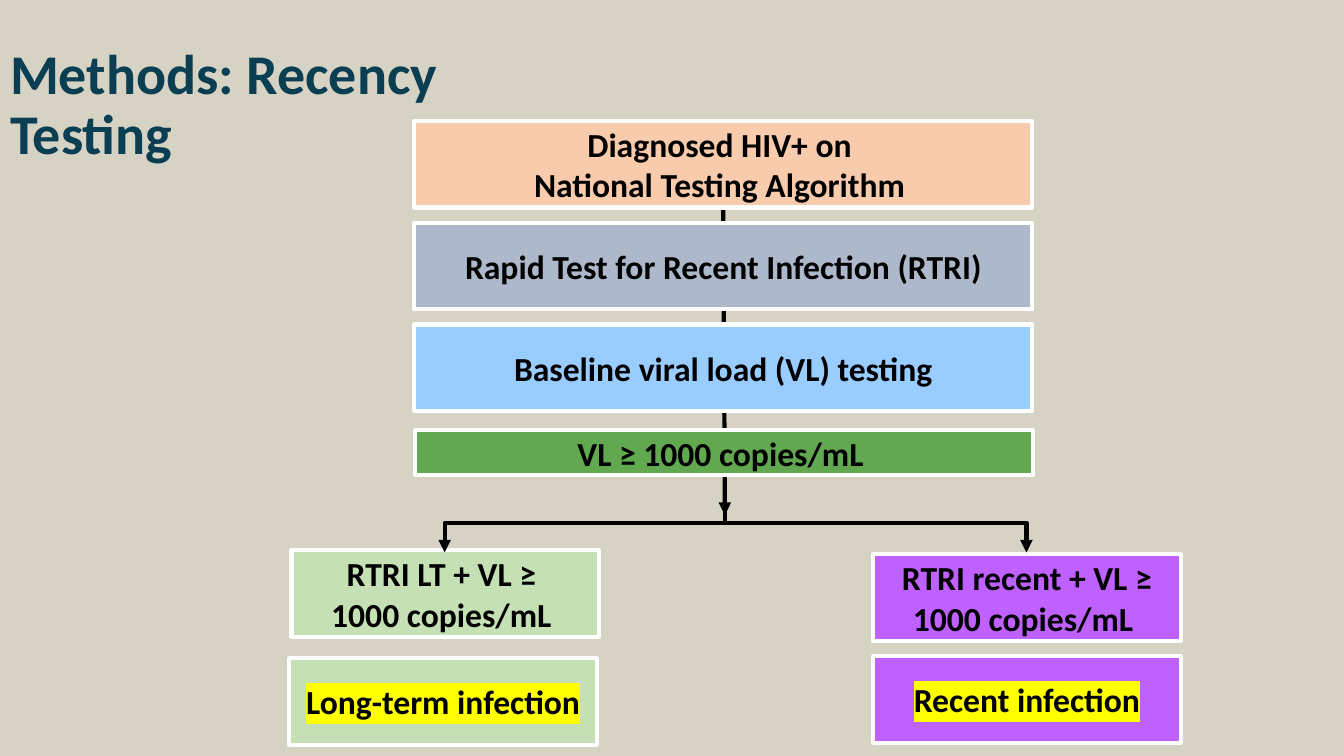
from pptx import Presentation, util as u
from pptx.dml.color import RGBColor
from pptx.enum import shapes, text
from pptx.oxml import parse_xml
from pptx.oxml.ns import nsdecls, qn

HUES = {
    "back": "D6D2C4", "title": "0A3E53", "ink": "000000", "edge": "FFFFFF",
    "peach": "F8CBAD", "slate": "ADB9CA", "sky": "99CCFF", "green": "61A851",
    "mint": "C5E0B4", "violet": "BF61FF", "mark": "FFFF00",
}
FONT = "Calibri"
WIDE, NARROW, TALL = 6.13, 3.05, 0.86
STEM = 7.19  # centre of the flow
FORK, TIPS = 4.89, 5.48  # top and bottom of the branches


def hue(name):
    return RGBColor.from_string(HUES[name])


def add_run(para, words, size, color, mark=False):
    run = para.add_run()
    run.text = words
    font = run.font
    font.size, font.bold = u.Pt(size), True
    font.color.rgb = hue(color)
    font.name = FONT
    if mark:
        light = parse_xml(f'<a:highlight {nsdecls("a")}>'
                          f'<a:srgbClr val="{HUES["mark"]}"/></a:highlight>')
        font._element.find(qn("a:solidFill")).addnext(light)


def add_title(slide, words):
    title = slide.shapes.title
    title.left, title.top = u.Inches(0), u.Inches(0.63)
    title.width, title.height = u.Inches(4.52), u.Inches(0.85)
    frame = title.text_frame
    frame.auto_size = text.MSO_AUTO_SIZE.NONE
    frame.vertical_anchor = text.MSO_ANCHOR.MIDDLE
    para = frame.paragraphs[0]
    para.alignment = text.PP_ALIGN.LEFT
    para.line_spacing = 0.9
    add_run(para, words, 40, "title")


def add_box(slide, left, top, width, height, fill, lines, wrap=True, mark=False):
    box = slide.shapes.add_shape(
        shapes.MSO_SHAPE.RECTANGLE, u.Inches(left), u.Inches(top),
        u.Inches(width), u.Inches(height))
    box.shadow.inherit = False
    box.fill.solid()
    box.fill.fore_color.rgb = hue(fill)
    box.line.color.rgb = hue("edge")
    box.line.width = u.Pt(3)
    frame = box.text_frame
    frame.word_wrap = wrap
    frame.vertical_anchor = text.MSO_ANCHOR.MIDDLE
    for i, words in enumerate(lines):
        para = frame.add_paragraph() if i else frame.paragraphs[0]
        para.alignment = text.PP_ALIGN.CENTER
        add_run(para, words, 24, "ink", mark)


def add_arrow(slide, kind, x1, y1, x2, y2):
    arrow = slide.shapes.add_connector(
        kind, u.Inches(x1), u.Inches(y1), u.Inches(x2), u.Inches(y2))
    arrow.line.color.rgb = hue("ink")
    arrow.line.width = u.Pt(3)
    arrow.line._get_or_add_ln().append(
        parse_xml(f'<a:tailEnd {nsdecls("a")} type="triangle"/>'))
    arrow._element.spPr.append(parse_xml(f'<a:effectLst {nsdecls("a")}/>'))
    return arrow


def add_branch(slide, tip):
    """Elbow that drops, runs sideways and drops again: a turned connector."""
    drop, span = TIPS - FORK, abs(tip - STEM)
    left = (STEM + tip - drop) / 2
    top = (FORK + TIPS - span) / 2
    arrow = add_arrow(slide, shapes.MSO_CONNECTOR.ELBOW,
                      left, top, left + drop, top + span)
    frame = arrow._element.spPr.find(qn("a:xfrm"))
    frame.set("rot", str((90 if tip < STEM else 270) * 60000))
    if tip > STEM:
        frame.set("flipH", "1")


def main():
    deck = Presentation()
    deck.slide_width, deck.slide_height = u.Inches(13.33), u.Inches(7.5)
    slide = deck.slides.add_slide(deck.slide_layouts[5])
    slide.background.fill.solid()
    slide.background.fill.fore_color.rgb = hue("back")
    add_title(slide, "Methods: Recency Testing")

    # Stem behind the steps
    add_arrow(slide, shapes.MSO_CONNECTOR.STRAIGHT, 7.17, 1.42, STEM, 5.11)

    # Testing steps
    steps = [
        ("peach", ["Diagnosed HIV+ on ", "National Testing Algorithm "]),
        ("slate", ["Rapid Test for Recent Infection (RTRI)"]),
        ("sky", ["Baseline viral load (VL) testing"]),
    ]
    for i, (fill, lines) in enumerate(steps):
        add_box(slide, 4.11, 1.2 + 1.01 * i, WIDE, TALL, fill, lines, wrap=False)
    add_box(slide, 4.12, 4.27, WIDE, 0.44, "green",
            ["VL ≥ 1000 copies/mL "], wrap=False)

    # Outcomes: criteria above, marked result below
    outcomes = [
        ("mint", (2.89, 5.46), ["RTRI LT + VL ≥ ", "1000 copies/mL "],
         (2.87, 6.53), "Long-term infection"),
        ("violet", (8.66, 5.5), ["RTRI recent + VL ≥ 1000 copies/mL "],
         (8.66, 6.51), "Recent infection"),
    ]
    for fill, rule, lines, spot, result in outcomes:
        add_box(slide, *rule, NARROW, TALL, fill, lines)
        add_box(slide, *spot, NARROW, TALL, fill, [result], mark=True)

    # Branches to the outcomes
    for tip in (4.41, 10.18):
        add_branch(slide, tip)

    deck.save("out.pptx")


if __name__ == "__main__":
    main()
